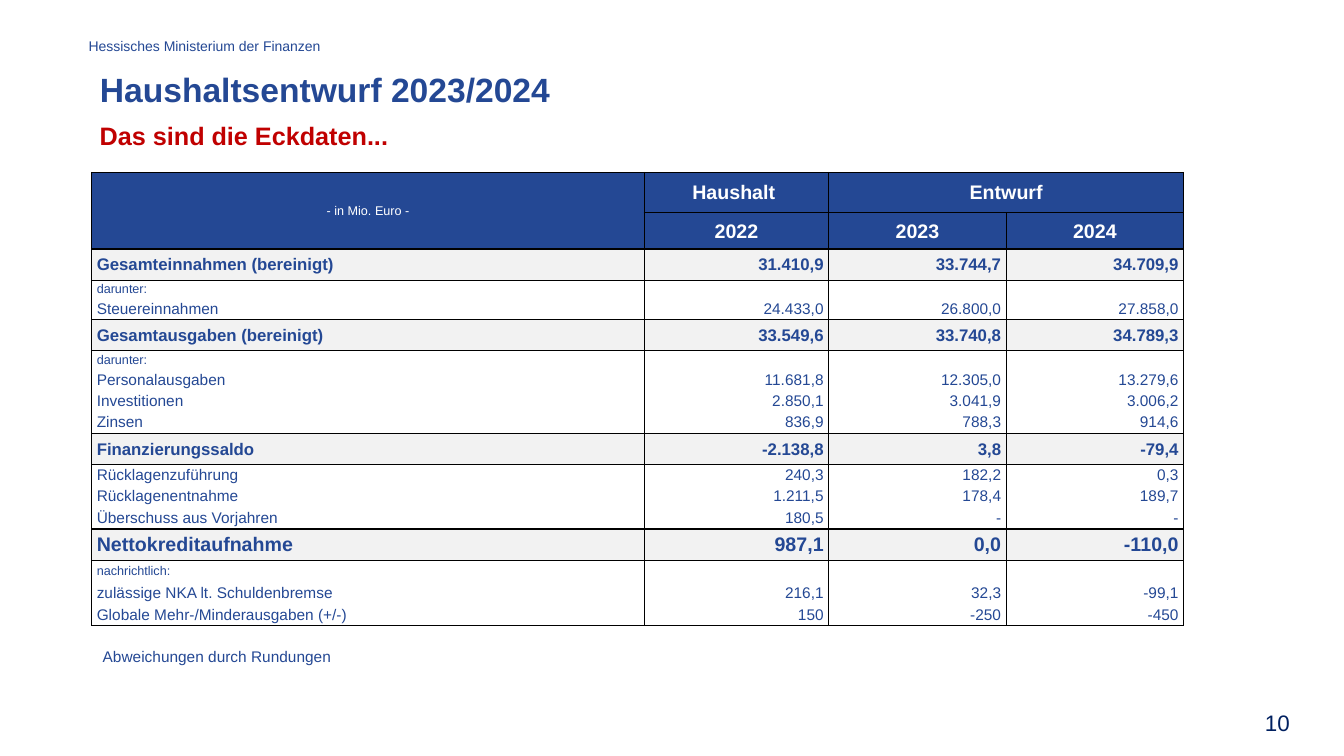
from lxml.etree import SubElement
from pptx import Presentation
from pptx.dml.color import RGBColor
from pptx.enum.text import MSO_ANCHOR, PP_ALIGN
from pptx.oxml.ns import qn
from pptx.util import Inches, Pt

COLORS = {"blue": "244894", "red": "C00000", "navy": "002060",
          "white": "FFFFFF", "gray": "F2F2F2", "black": "000000"}


def set_text(tf, text, size, color, bold=False, align=PP_ALIGN.LEFT):
    tf.text = text
    p = tf.paragraphs[0]
    p.alignment = align
    p.font.name = "Arial"
    p.font.size = Pt(size)
    p.font.bold = bold
    p.font.color.rgb = RGBColor.from_string(COLORS[color])
    return p


def add_border(cell, side, visible):
    ln = SubElement(cell._tc.get_or_add_tcPr(), qn(f"a:ln{side}"), w=str(Pt(1)))
    if visible:
        fill = SubElement(ln, qn("a:solidFill"))
        SubElement(fill, qn("a:srgbClr"), val=COLORS["black"])
    else:
        SubElement(ln, qn("a:noFill"))


prs = Presentation()
prs.slide_width = Inches(13.33)
prs.slide_height = Inches(7.5)
s = prs.slides.add_slide(prs.slide_layouts[5])

title = s.shapes.title
title.left, title.top, title.width, title.height = map(Inches, (0.89, 0.62, 7.77, 0.52))
title.text_frame.vertical_anchor = MSO_ANCHOR.MIDDLE
set_text(title.text_frame, "Haushaltsentwurf 2023/2024", 24, "blue", True)

labels = [
    ("Hessisches Ministerium der Finanzen", (0.78, 0.32, 6.33, 0.27), 10, "blue", False, PP_ALIGN.LEFT),
    ("Das sind die Eckdaten...", (0.89, 1.15, 8.79, 0.39), 18, "red", True, PP_ALIGN.LEFT),
    ("Abweichungen durch Rundungen", (0.92, 6.37, 2.49, 0.29), 11, "blue", False, PP_ALIGN.LEFT),
    ("10", (11.39, 7, 1.5, 0.33), 16, "navy", False, PP_ALIGN.RIGHT),
]
for text, box, size, color, bold, align in labels:
    tf = s.shapes.add_textbox(*map(Inches, box)).text_frame
    tf.word_wrap = True
    tf.vertical_anchor = MSO_ANCHOR.MIDDLE
    set_text(tf, text, size, color, bold, align)

rows = [
    ("head", 14, 0.4, "- in Mio. Euro -", "Haushalt ", "Entwurf", ""),
    ("head", 14, 0.36, "", "2022", "2023", "2024"),
    ("total", 12, 0.31, "Gesamteinnahmen (bereinigt)", "31.410,9", "33.744,7", "34.709,9"),
    ("item", 9, 0.17, "darunter:", "", "", ""),
    ("item", 11, 0.22, "Steuereinnahmen", "24.433,0", "26.800,0", "27.858,0"),
    ("total", 12, 0.31, "Gesamtausgaben (bereinigt)", "33.549,6", "33.740,8", "34.789,3"),
    ("item", 9, 0.18, "darunter:", "", "", ""),
    ("item", 11, 0.21, "Personalausgaben", "11.681,8", "12.305,0", "13.279,6"),
    ("item", 11, 0.21, "Investitionen", "2.850,1", "3.041,9", "3.006,2"),
    ("item", 11, 0.22, "Zinsen", "836,9", "788,3", "914,6"),
    ("total", 12, 0.31, "Finanzierungssaldo", "-2.138,8", "3,8", "-79,4"),
    ("item", 11, 0.21, "Rücklagenzuführung", "240,3", "182,2", "0,3"),
    ("item", 11, 0.21, "Rücklagenentnahme", "1.211,5", "178,4", "189,7"),
    ("item", 11, 0.22, "Überschuss aus Vorjahren", "180,5", "-", "-"),
    ("total", 14, 0.31, "Nettokreditaufnahme", "987,1", "0,0", "-110,0"),
    ("item", 9, 0.21, "nachrichtlich:", "", "", ""),
    ("item", 11, 0.22, "zulässige NKA lt. Schuldenbremse", "216,1", "32,3", "-99,1"),
    ("item", 11, 0.22, "Globale Mehr-/Minderausgaben (+/-)", "150", "-250", "-450"),
]
col_widths = [5.48, 1.83, 1.76, 1.76]
kinds = [row[0] for row in rows]
styles = {"head": ("blue", "white", True), "total": ("gray", "blue", True), "item": ("white", "blue", False)}

table = s.shapes.add_table(len(rows), len(col_widths), Inches(0.91), Inches(1.71),
                           Inches(sum(col_widths)), Inches(sum(row[2] for row in rows))).table
table.first_row = False
table.horz_banding = False
for column, width in zip(table.columns, col_widths):
    column.width = Inches(width)

for i, (kind, size, height, *values) in enumerate(rows):
    table.rows[i].height = Inches(height)
    fill, color, bold = styles[kind]
    line_above = kind != "item" or kinds[i - 1] != "item"
    line_below = kind != "item" or i == len(rows) - 1 or kinds[i + 1] != "item"
    for j, value in enumerate(values):
        cell = table.cell(i, j)
        cell.margin_left = cell.margin_right = Inches(0.05)
        cell.margin_top = cell.margin_bottom = 0
        cell.vertical_anchor = MSO_ANCHOR.MIDDLE
        for side, visible in zip("LRTB", (True, True, line_above, line_below)):
            add_border(cell, side, visible)
        cell.fill.solid()
        cell.fill.fore_color.rgb = RGBColor.from_string(COLORS[fill])
        align = PP_ALIGN.CENTER if kind == "head" else PP_ALIGN.RIGHT if j else PP_ALIGN.LEFT
        p = set_text(cell.text_frame, value, size, color, bold, align)
        p.line_spacing = 1.05
        if not value:
            SubElement(p._p, qn("a:endParaRPr"), sz=str(size * 100))

unit = table.cell(0, 0)
unit.text_frame.paragraphs[0].font.size = Pt(9)
unit.text_frame.paragraphs[0].font.bold = False
unit.merge(table.cell(1, 0))
table.cell(0, 2).merge(table.cell(0, 3))

prs.save("out.pptx")
